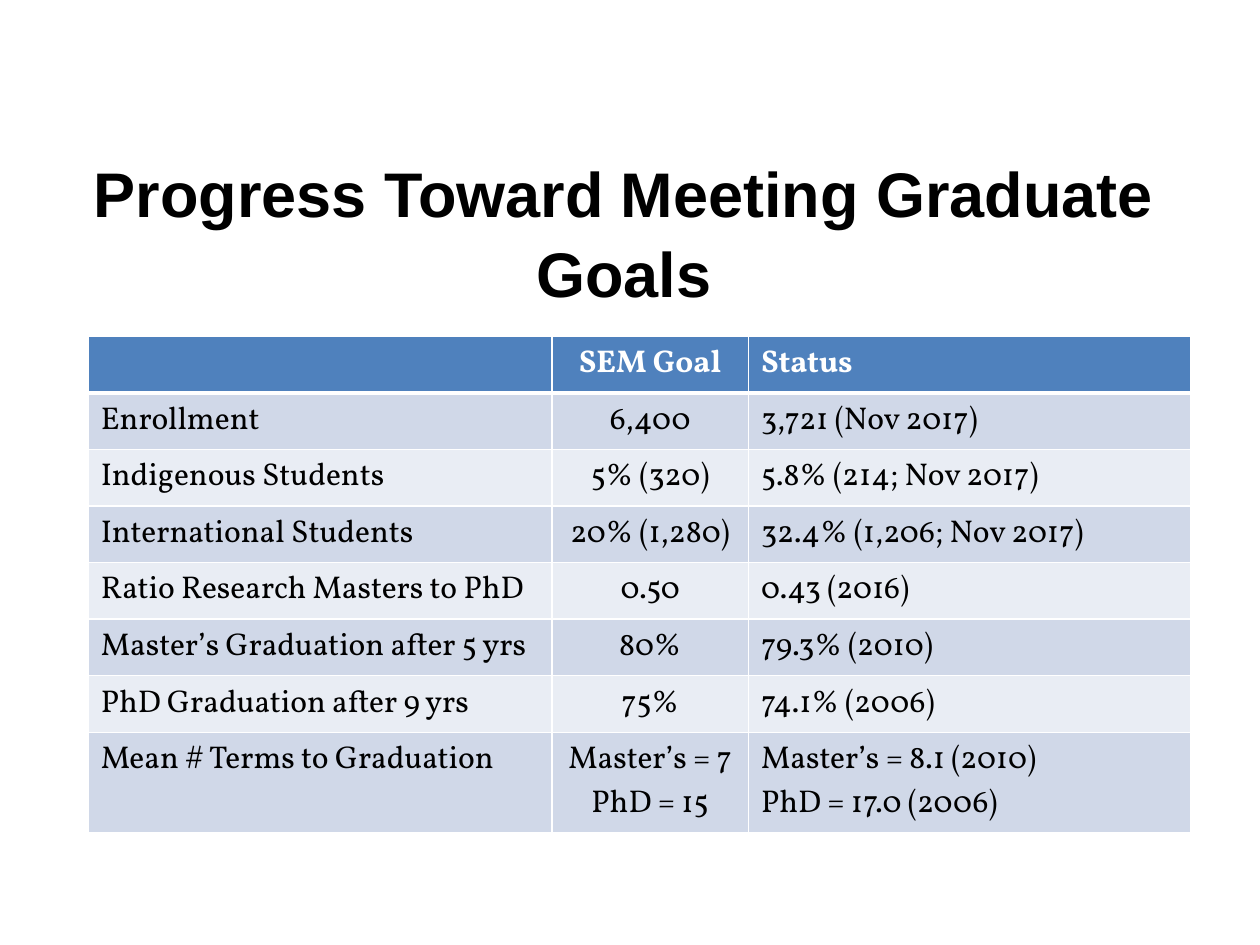
from lxml import etree
from pptx import Presentation
from pptx.dml.color import RGBColor
from pptx.enum.text import MSO_ANCHOR, MSO_AUTO_SIZE, PP_ALIGN
from pptx.oxml.ns import qn
from pptx.util import Inches, Pt

LEFT, CENTER = PP_ALIGN.LEFT, PP_ALIGN.CENTER
TOP = MSO_ANCHOR.TOP
NO_AUTOFIT = MSO_AUTO_SIZE.NONE
TITLE_ONLY = 5

TITLE = "Progress Toward Meeting Graduate Goals"
GOALS = [
    ("", "SEM Goal", "Status"),
    ("Enrollment", "6,400", "3,721 (Nov 2017)"),
    ("Indigenous Students", "5% (320)", "5.8% (214; Nov 2017)"),
    ("International Students", "20% (1,280)", "32.4% (1,206; Nov 2017)"),
    ("Ratio Research Masters to PhD", "0.50", "0.43 (2016)"),
    ("Master’s Graduation after 5 yrs", "80%", "79.3% (2010)"),
    ("PhD Graduation after 9 yrs", "75%", "74.1% (2006)"),
    ("Mean # Terms to Graduation", "Master’s = 7\nPhD = 15",
     "Master’s = 8.1 (2010)\nPhD = 17.0 (2006)"),
]
COLUMN_WIDTHS = [3.68, 1.56, 3.51]
COLUMN_ALIGNMENTS = [LEFT, CENTER, LEFT]
HEADER_FILL, BAND_FILLS = "4F81BD", ["D0D8E8", "E9EDF4"]
TITLE_FORMAT = {"name": "Arial", "size": Pt(36), "bold": True}
HEADER_FORMAT = {"name": "Vollkorn", "size": Pt(18), "bold": True}
BODY_FORMAT = {**HEADER_FORMAT, "bold": False}


def color(hex_string):
    return RGBColor.from_string(hex_string)


def set_attributes(target, values):
    for name, value in values.items():
        setattr(target, name, value)


def format_paragraphs(text_frame, alignment, font_format, font_color):
    for paragraph in text_frame.paragraphs:
        paragraph.alignment = alignment
        set_attributes(paragraph.font, font_format)
        paragraph.font.color.rgb = color(font_color)


def set_borders(cell, hex_string, widths):
    """Draw the cell edges; widths maps an edge tag to points."""
    properties = cell._tc.get_or_add_tcPr()
    for position, (tag, width) in enumerate(widths.items()):
        line = etree.Element(qn(f"a:{tag}"), w=str(Pt(width)))
        fill = etree.SubElement(line, qn("a:solidFill"))
        etree.SubElement(fill, qn("a:srgbClr"), val=hex_string)
        properties.insert(position, line)


def place_title(slide, left, top, width, height):
    title = slide.shapes.title
    set_attributes(title, {"left": left, "top": top, "width": width, "height": height})
    text_frame = title.text_frame
    text_frame.text = TITLE
    set_attributes(text_frame, {
        "word_wrap": True, "auto_size": NO_AUTOFIT, "vertical_anchor": TOP,
        "margin_left": 0, "margin_right": Inches(0.1),
        "margin_top": Inches(0.05), "margin_bottom": Inches(0.05),
    })
    format_paragraphs(text_frame, CENTER, TITLE_FORMAT, "000000")
    text_frame.paragraphs[0].line_spacing = 1.05


def place_goals_table(slide, left, top, width, height):
    table = slide.shapes.add_table(
        len(GOALS), len(COLUMN_WIDTHS), left, top, width, height).table
    for column, column_width in zip(table.columns, COLUMN_WIDTHS):
        column.width = Inches(column_width)

    for row_index, row in enumerate(GOALS):
        is_header = row_index == 0
        fill = HEADER_FILL if is_header else BAND_FILLS[(row_index - 1) % 2]
        font_format = HEADER_FORMAT if is_header else BODY_FORMAT
        font_color = "FFFFFF" if is_header else "000000"
        # The rule under the header is heavier than the other borders
        widths = {"lnL": 1, "lnR": 1,
                  "lnT": 3 if row_index == 1 else 1,
                  "lnB": 3 if is_header else 1}
        for column_index, text in enumerate(row):
            cell = table.cell(row_index, column_index)
            cell.text = text
            cell.fill.solid()
            cell.fill.fore_color.rgb = color(fill)
            set_borders(cell, "FFFFFF", widths)
            format_paragraphs(cell.text_frame, COLUMN_ALIGNMENTS[column_index],
                              font_format, font_color)


def main():
    presentation = Presentation()
    presentation.slide_width = Inches(10)
    presentation.slide_height = Inches(7.5)
    slide = presentation.slides.add_slide(presentation.slide_layouts[TITLE_ONLY])

    # Heading
    place_title(slide, Inches(0.69), Inches(1.15), Inches(8.62), Inches(0.68))
    # Goals against current status
    place_goals_table(slide, Inches(0.7), Inches(2.67), Inches(8.75), Inches(3.28))

    presentation.save("out.pptx")


if __name__ == "__main__":
    main()
